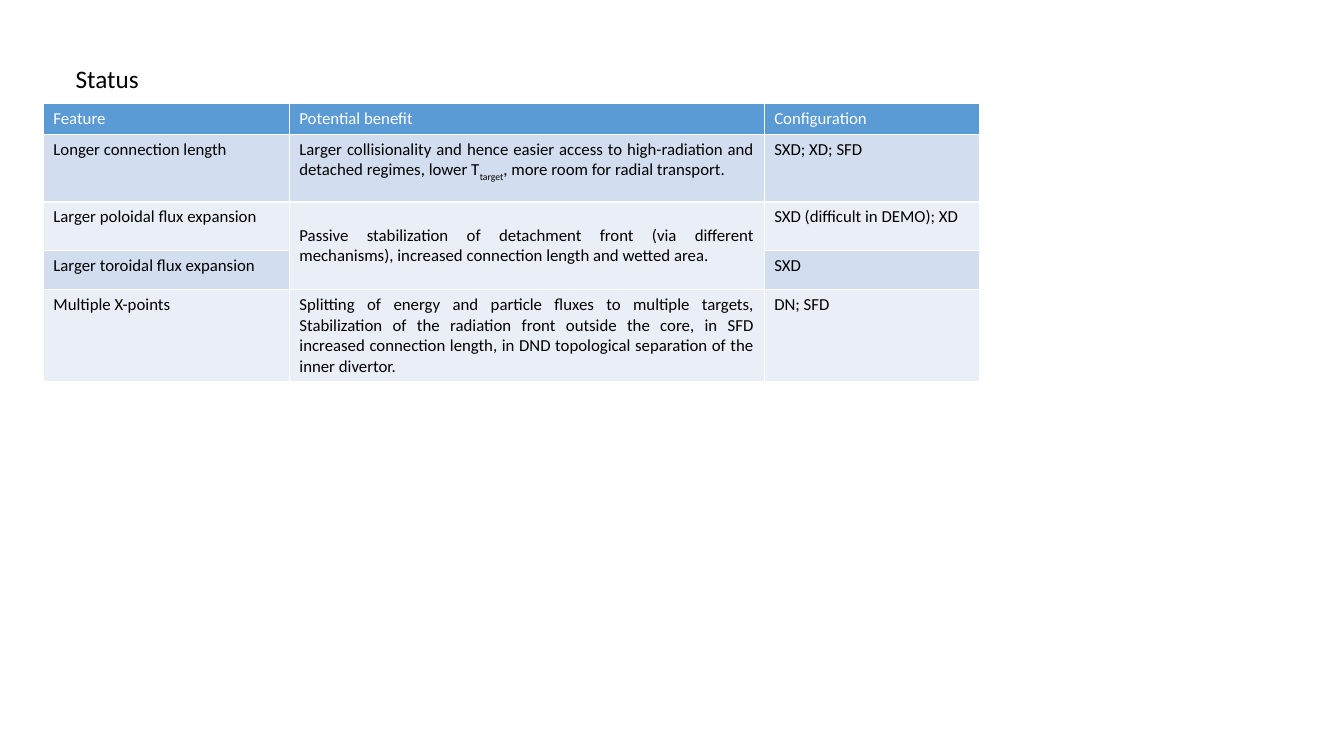
"""Build the status slide with its table of divertor features."""
import pptx
import pptx.dml.color
import pptx.enum.text
import pptx.util

Inches = pptx.util.Inches
RGBColor = pptx.dml.color.RGBColor
Align = pptx.enum.text.PP_ALIGN
Anchor = pptx.enum.text.MSO_ANCHOR

BLACK = RGBColor(0x00, 0x00, 0x00)
WHITE = RGBColor(0xFF, 0xFF, 0xFF)
HEADER_BLUE = RGBColor(0x5B, 0x9B, 0xD5)
BAND_DARK = RGBColor(0xD2, 0xDE, 0xEF)
BAND_LIGHT = RGBColor(0xEA, 0xEF, 0xF7)

COLUMN_WIDTHS = [2.44, 4.71, 2.14]
ROW_HEIGHTS = [0.29, 0.67, 0.48, 0.39, 0.86]
SUBSCRIPT = "target"
ROWS = [
    ["Feature", "Potential benefit", "Configuration"],
    ["Longer connection length",
     "Larger collisionality and hence easier access to high-radiation and "
     "detached regimes, lower T|target|, more room for radial transport.",
     "SXD; XD; SFD"],
    ["Larger poloidal flux expansion",
     "Passive stabilization of detachment front (via different mechanisms), "
     "increased connection length and wetted area.",
     "SXD (difficult in DEMO); XD"],
    ["Larger toroidal flux expansion", "", "SXD"],
    ["Multiple X-points",
     "Splitting of energy and particle fluxes to multiple targets, "
     "Stabilization of the radiation front outside the core, in SFD increased "
     "connection length, in DND topological separation of the inner divertor.",
     "DN; SFD"],
]


def add_text(paragraph, text, size, color, alignment):
    paragraph.alignment = alignment
    font_format = {"name": "Calibri", "size": pptx.util.Pt(size), "bold": False}
    for part in text.split("|"):
        run = paragraph.add_run()
        run.text = part
        for attribute, value in font_format.items():
            setattr(run.font, attribute, value)
        run.font.color.rgb = color
        if part == SUBSCRIPT:
            run._r.get_or_add_rPr().set("baseline", "-25000")


presentation = pptx.Presentation()
presentation.slide_width = Inches(13.33)
presentation.slide_height = Inches(7.5)
slide = presentation.slides.add_slide(presentation.slide_layouts[5])

title = slide.shapes.title
title_place = {"left": 0.65, "top": 0.58, "width": 1.88, "height": 0.4}
for attribute, value in title_place.items():
    setattr(title, attribute, Inches(value))
title.text_frame.vertical_anchor = Anchor.TOP
title.text_frame.auto_size = pptx.enum.text.MSO_AUTO_SIZE.NONE
add_text(title.text_frame.paragraphs[0], "Status", 18, BLACK, Align.LEFT)

table = slide.shapes.add_table(
    len(ROWS), len(COLUMN_WIDTHS), Inches(0.43), Inches(1.03),
    Inches(sum(COLUMN_WIDTHS)), Inches(sum(ROW_HEIGHTS))).table
for column, width in zip(table.columns, COLUMN_WIDTHS):
    column.width = Inches(width)

for row_index, texts in enumerate(ROWS):
    table.rows[row_index].height = Inches(ROW_HEIGHTS[row_index])
    is_header = row_index == 0
    band = BAND_DARK if row_index % 2 else BAND_LIGHT
    for column_index, text in enumerate(texts):
        cell = table.cell(row_index, column_index)
        cell.fill.solid()
        cell.fill.fore_color.rgb = HEADER_BLUE if is_header else band
        if text:
            add_text(cell.text_frame.paragraphs[0], text, 12,
                     WHITE if is_header else BLACK, Align.JUSTIFY)

shared_benefit = table.cell(2, 1)
shared_benefit.merge(table.cell(3, 1))
shared_benefit.vertical_anchor = Anchor.MIDDLE

presentation.save("out.pptx")
